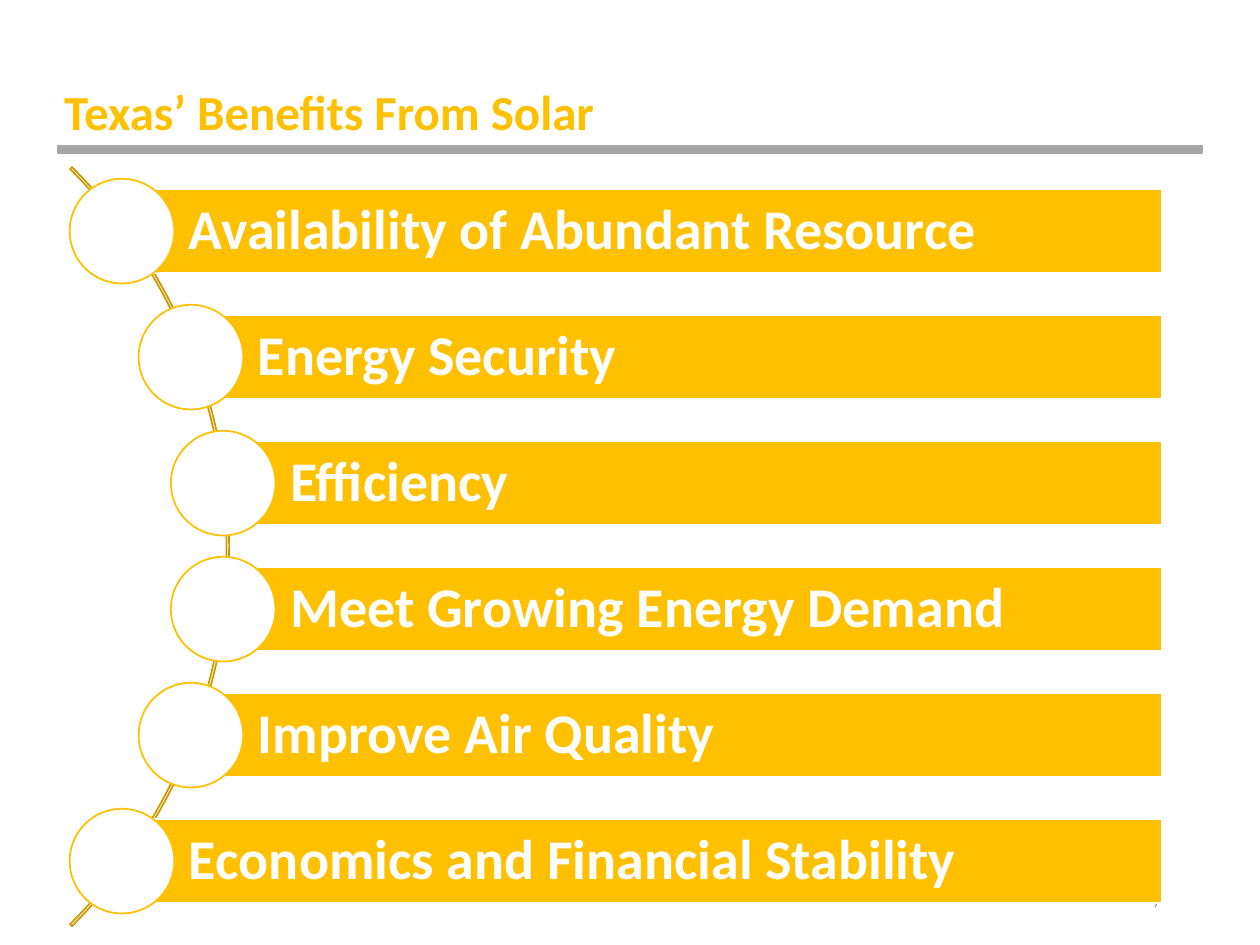
from dataclasses import dataclass

from pptx import Presentation
from pptx import util as u
from pptx.dml.color import RGBColor
from pptx.enum import shapes, text
from pptx.util import Cm


@dataclass(frozen=True)
class Theme:
    font: str = "Calibri"
    gold: str = "FFC000"
    dark_gold: str = "CC9A00"
    grey: str = "A6A6A6"
    number_grey: str = "8C8C8C"
    white: str = "FFFFFF"
    title_size: int = 28
    item_size: int = 32
    number_size: int = 9


@dataclass(frozen=True)
class Benefit:
    label: str
    center_x: float  # circle centre and bar start, in cm


THEME = Theme()
BENEFITS = [
    Benefit("Availability of Abundant Resource", 2.46),
    Benefit("Energy Security", 3.85),
    Benefit("Efficiency", 4.5),
    Benefit("Meet Growing Energy Demand", 4.5),
    Benefit("Improve Air Quality", 3.85),
    Benefit("Economics and Financial Stability", 2.46),
]
FIRST_Y, PITCH = 4.66, 2.54
BAR_RIGHT, BAR_HEIGHT, CIRCLE = 23.43, 1.7, 2.11


def add_shape(s, kind, left: float, top: float, width: float, height: float,
              line: str, fill: str | None = None):
    sp = s.shapes.add_shape(kind, Cm(left), Cm(top), Cm(width), Cm(height))
    sp.shadow.inherit = False
    if fill:
        sp.fill.solid()
        sp.fill.fore_color.rgb = RGBColor.from_string(fill)
    else:
        sp.fill.background()
    sp.line.color.rgb = RGBColor.from_string(line)
    sp.line.width = u.Pt(1)
    return sp


def write(sp, label: str, size: int, color: str, anchor, align,
          bold: bool = False, spacing: float = 1.0) -> None:
    tf = sp.text_frame
    tf.text = label
    tf.word_wrap = True
    tf.auto_size = text.MSO_AUTO_SIZE.NONE
    tf.vertical_anchor = anchor
    p = tf.paragraphs[0]
    p.alignment = align
    p.line_spacing = spacing
    font = p.runs[0].font
    font.name, font.size, font.bold = THEME.font, u.Pt(size), bold
    font.color.rgb = RGBColor.from_string(color)


def add_benefit(s, benefit: Benefit, center_y: float) -> None:
    x = benefit.center_x
    bar = add_shape(s, shapes.MSO_SHAPE.RECTANGLE, x, center_y - BAR_HEIGHT / 2,
                    BAR_RIGHT - x, BAR_HEIGHT, THEME.white, THEME.gold)
    write(bar, benefit.label, THEME.item_size, THEME.white,
          text.MSO_ANCHOR.MIDDLE, text.PP_ALIGN.LEFT, True, 0.9)
    tf = bar.text_frame
    tf.margin_left = Cm(1.35)
    tf.margin_top = tf.margin_right = tf.margin_bottom = Cm(0.23)
    add_shape(s, shapes.MSO_SHAPE.OVAL, x - CIRCLE / 2, center_y - CIRCLE / 2,
              CIRCLE, CIRCLE, THEME.gold, THEME.white)


def main() -> None:
    prs = Presentation()
    prs.slide_width, prs.slide_height = Cm(25.4), Cm(19.05)
    s = prs.slides.add_slide(prs.slide_layouts[5])

    # Title and rule
    title = s.shapes.title
    title.left, title.top, title.width, title.height = Cm(1.04), Cm(0.69), Cm(23.19), Cm(2.29)
    write(title, "Texas’ Benefits From Solar", THEME.title_size, THEME.gold,
          text.MSO_ANCHOR.BOTTOM, text.PP_ALIGN.LEFT, True, 0.9)
    add_shape(s, shapes.MSO_SHAPE.RECTANGLE, 1.17, 2.95, 23.06, 0.13,
              THEME.grey, THEME.grey)

    # Page number, behind the last bar
    number = s.shapes.add_textbox(Cm(17.93), Cm(17.65), Cm(5.72), Cm(1.02))
    write(number, "7", THEME.number_size, THEME.number_grey,
          text.MSO_ANCHOR.MIDDLE, text.PP_ALIGN.RIGHT)

    # Arc joining the circles
    arc = add_shape(s, shapes.MSO_SHAPE.BLOCK_ARC, -17.02, 0.2, 21.64, 21.64,
                    THEME.dark_gold)
    for i, value in enumerate((189, 27, 0.0025)):
        arc.adjustments[i] = value

    # Benefits
    for i, benefit in enumerate(BENEFITS):
        add_benefit(s, benefit, FIRST_Y + i * PITCH)

    prs.save("out.pptx")


if __name__ == "__main__":
    main()
